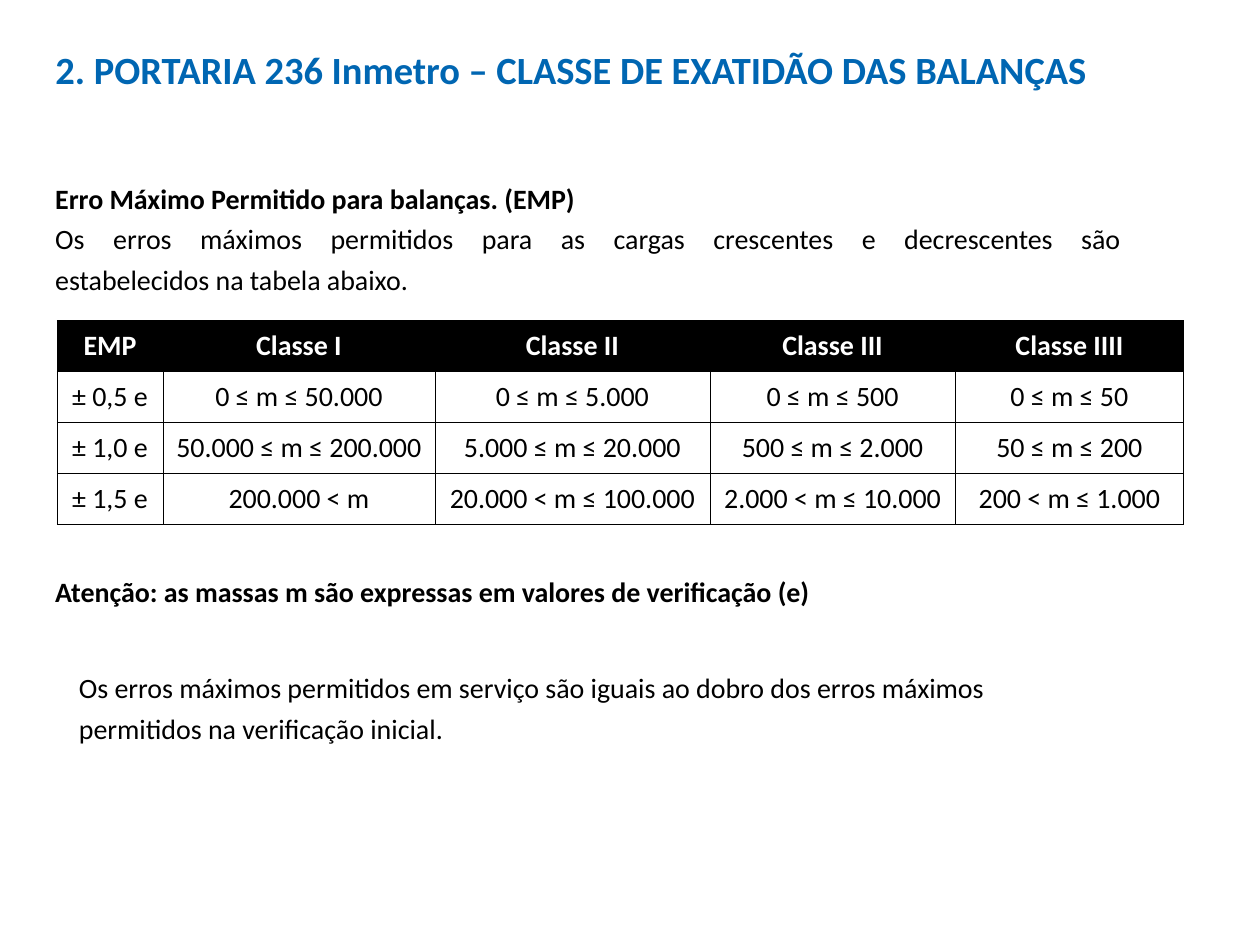
from lxml.etree import SubElement
from pptx import Presentation
from pptx.dml.color import RGBColor
from pptx.enum.text import MSO_ANCHOR as Anchor, MSO_AUTO_SIZE as AutoSize, PP_ALIGN as Align
from pptx.oxml.ns import qn
from pptx.util import Pt

BLUE = RGBColor(0x00, 0x66, 0xB2)
BLACK = RGBColor(0, 0, 0)
WHITE = RGBColor(0xFF, 0xFF, 0xFF)

COLUMN_WIDTHS = [60.5, 155.5, 157, 140.4, 130.3]
ERROR_LIMITS = [
    ["EMP", "Classe I", "Classe II", "Classe III", "Classe IIII"],
    ["± 0,5 e", "0 ≤ m ≤ 50.000", "0 ≤ m ≤ 5.000", "0 ≤ m ≤ 500", "0 ≤ m ≤ 50"],
    ["± 1,0 e", "50.000 ≤ m ≤ 200.000", "5.000 ≤ m ≤ 20.000", "500 ≤ m ≤ 2.000", "50 ≤ m ≤ 200"],
    ["± 1,5 e", "200.000 < m", "20.000 < m ≤ 100.000", "2.000 < m ≤ 10.000", "200 < m ≤ 1.000"],
]


def write(para, text, size=16, color=BLACK, bold=False, align=Align.LEFT, spacing=1.2):
    para.alignment = align
    para.line_spacing = spacing
    para.space_before = Pt(0)
    for index, line in enumerate(text.split("\n")):
        if index:
            para.add_line_break()
        span = para.add_run()
        span.text = line
        span.font.name = "Calibri"
        span.font.size = Pt(size)
        span.font.bold = bold
        span.font.color.rgb = color


def add_title(page, left, top, width, height, text):
    title = page.shapes.title
    title.left, title.top, title.width, title.height = map(Pt, (left, top, width, height))
    frame = title.text_frame
    frame.auto_size = AutoSize.NONE
    frame.vertical_anchor = Anchor.MIDDLE
    write(frame.paragraphs[0], text, size=22, color=BLUE, bold=True, spacing=0.9)


def add_text(page, left, top, width, height, lines, align=Align.LEFT):
    box = page.shapes.add_textbox(Pt(left), Pt(top), Pt(width), Pt(height))
    frame = box.text_frame
    frame.word_wrap = True
    for index, (text, bold) in enumerate(lines):
        para = frame.add_paragraph() if index else frame.paragraphs[0]
        write(para, text, bold=bold, align=align)


def add_borders(cell):
    properties = cell._tc.get_or_add_tcPr()
    for side in ("a:lnL", "a:lnR", "a:lnT", "a:lnB"):
        line = SubElement(properties, qn(side), w=str(Pt(0.25)))
        fill = SubElement(line, qn("a:solidFill"))
        SubElement(fill, qn("a:srgbClr"), val=str(BLACK))


def add_limits_table(page, left, top, height):
    rows, columns = len(ERROR_LIMITS), len(COLUMN_WIDTHS)
    table = page.shapes.add_table(
        rows, columns, Pt(left), Pt(top), Pt(sum(COLUMN_WIDTHS)), Pt(height)
    ).table
    for column, width in zip(table.columns, COLUMN_WIDTHS):
        column.width = Pt(width)
    for row_index, values in enumerate(ERROR_LIMITS):
        header = row_index == 0
        table.rows[row_index].height = Pt(height / rows)
        for column_index, text in enumerate(values):
            cell = table.cell(row_index, column_index)
            cell.vertical_anchor = Anchor.MIDDLE
            add_borders(cell)
            cell.fill.solid()
            cell.fill.fore_color.rgb = BLACK if header else WHITE
            write(cell.text_frame.paragraphs[0], text, color=WHITE if header else BLACK,
                  bold=header, align=Align.CENTER, spacing=1.0)


def main():
    deck = Presentation()
    deck.slide_width, deck.slide_height = Pt(720), Pt(540)
    page = deck.slides.add_slide(deck.slide_layouts[5])
    add_title(page, 24.5, 18, 646.5, 46.8,
              "2. PORTARIA 236 Inmetro – CLASSE DE EXATIDÃO DAS BALANÇAS")
    add_text(page, 24.5, 96.5, 623.5, 80, [
        ("Erro Máximo Permitido para balanças. (EMP)", True),
        ("Os erros máximos permitidos para as cargas crescentes e decrescentes são\n"
         "estabelecidos na tabela abaixo.", False),
    ], align=Align.JUSTIFY)
    add_limits_table(page, 32.6, 183, 116.8)
    add_text(page, 24.5, 321, 623.5, 32, [
        ("Atenção: as massas m são expressas em valores de verificação (e)", True),
    ], align=Align.JUSTIFY)
    add_text(page, 38, 376, 610, 52.5, [
        ("Os erros máximos permitidos em serviço são iguais ao dobro dos erros máximos\n"
         "permitidos na verificação inicial.", False),
    ])
    deck.save("out.pptx")


if __name__ == "__main__":
    main()
